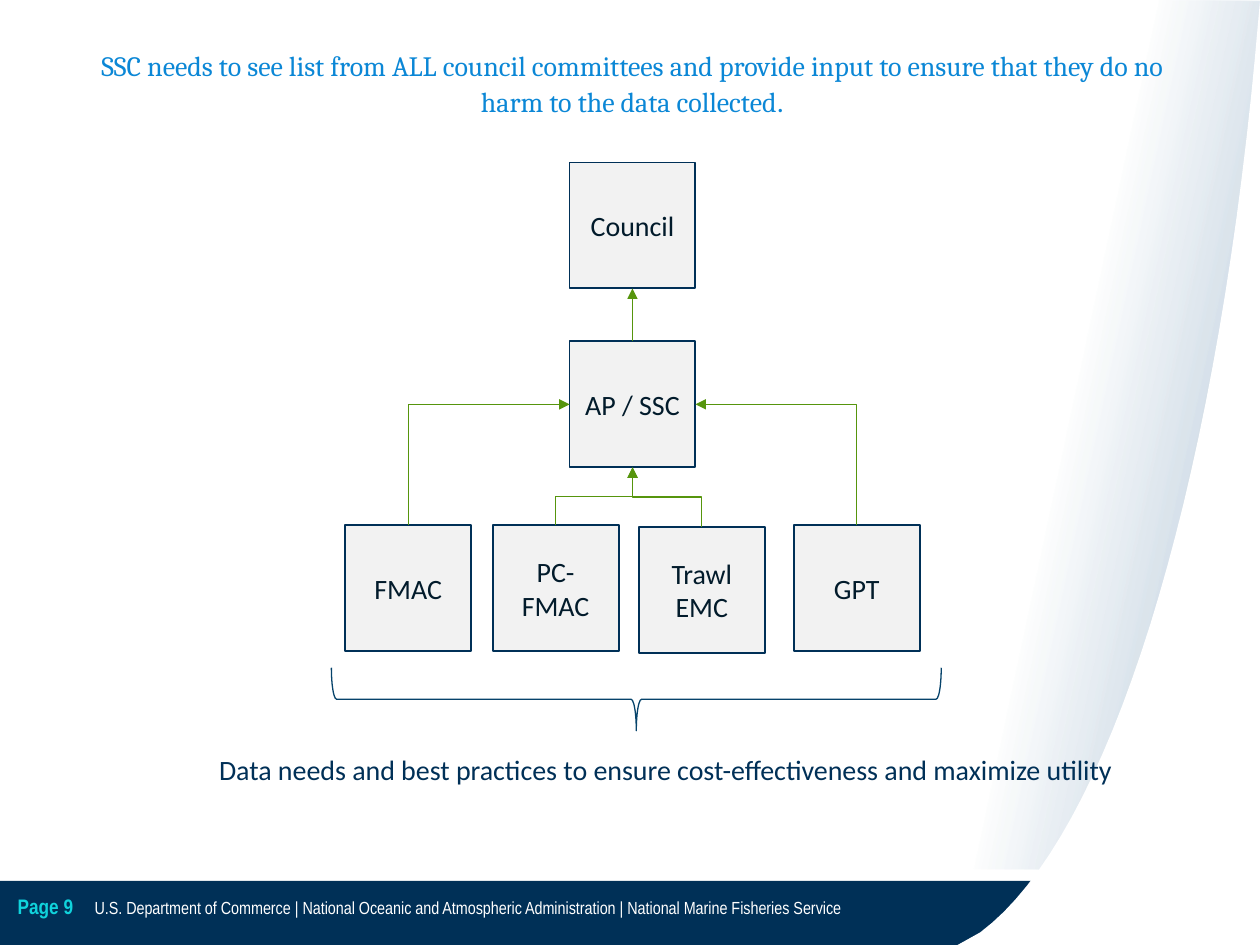
from lxml.etree import SubElement
from pptx import Presentation
from pptx.dml.color import RGBColor
from pptx.enum.shapes import MSO_CONNECTOR, MSO_SHAPE
from pptx.enum.text import MSO_ANCHOR, MSO_AUTO_SIZE, PP_ALIGN
from pptx.oxml.ns import qn
from pptx.util import Pt

PX = 9144
NAVY, GREEN, INK, PALE, WHITE = "003057", "56950D", "021B2B", "F2F2F2", "FFFFFF"


def color(value):
    """Turn a hex string into a colour."""
    return RGBColor.from_string(value)


def write(shape, text, size=16, font="Calibri", fill=NAVY, bold=False, align=PP_ALIGN.LEFT):
    """Add a formatted run to the first paragraph of a shape."""
    paragraph = shape.text_frame.paragraphs[0]
    paragraph.alignment = align
    run = paragraph.add_run()
    run.text = text
    run.font.size, run.font.name, run.font.bold = Pt(size), font, bold
    run.font.color.rgb = color(fill)
    return paragraph


def cubic(start, pull, push, end, steps=32):
    """Return points along a cubic curve, after its start."""
    points = []
    for step in range(1, steps + 1):
        t = step / steps
        weights = ((1 - t) ** 3, 3 * t * (1 - t) ** 2, 3 * t * t * (1 - t), t ** 3)
        points.append(tuple(
            sum(w * p[axis] for w, p in zip(weights, (start, pull, push, end)))
            for axis in (0, 1)))
    return points


class Chart:
    """Hold the slide and draw each kind of element on it."""

    def __init__(self, deck):
        """Add a blank slide to the deck."""
        self.slide = deck.slides.add_slide(deck.slide_layouts[6])
        self.shapes = self.slide.shapes

    def preset(self, kind, left, top, width, height, fill=None, line=None, weight=1.1):
        """Draw a preset shape."""
        shape = self.shapes.add_shape(kind, left * PX, top * PX, width * PX, height * PX)
        shape.shadow.inherit = False
        if fill:
            shape.fill.solid()
            shape.fill.fore_color.rgb = color(fill)
        else:
            shape.fill.background()
        if line:
            shape.line.color.rgb = color(line)
            shape.line.width = Pt(weight)
        else:
            shape.line.fill.background()
        return shape

    def box(self, name, left, top):
        """Draw a labelled square of the organisation chart."""
        square = self.preset(MSO_SHAPE.RECTANGLE, left, top, 100, 100, PALE, NAVY)
        square.text_frame.vertical_anchor = MSO_ANCHOR.MIDDLE
        write(square, name, fill=INK, align=PP_ALIGN.CENTER)

    def outline(self, points):
        """Draw a closed shape without a line."""
        (x, y), *rest = [(round(x * PX), round(y * PX)) for x, y in points]
        builder = self.shapes.build_freeform(x, y)
        builder.add_line_segments(rest, close=True)
        shape = builder.convert_to_shape()
        shape.shadow.inherit = False
        shape.line.fill.background()
        return shape

    def fade(self, points, tint, alphas, stops, angle):
        """Draw an outline that fades from one opacity to another."""
        shape = self.outline(points)
        shape.fill.gradient()
        shape.fill.gradient_angle = angle
        for stop, position in zip(shape.fill.gradient_stops, stops):
            stop.color.rgb = color(tint)
            stop.position = position
        tints = shape._element.spPr.find(qn("a:gradFill")).iter(qn("a:srgbClr"))
        for element, alpha in zip(tints, alphas):
            SubElement(element, qn("a:alpha"), val=str(alpha * 1000))

    def text_box(self, left, top, width, height, wrap=True, anchor=MSO_ANCHOR.TOP, insets=None):
        """Add an empty text box."""
        box = self.shapes.add_textbox(left * PX, top * PX, width * PX, height * PX)
        frame = box.text_frame
        frame.word_wrap, frame.vertical_anchor = wrap, anchor
        if insets is None:
            frame.auto_size = MSO_AUTO_SIZE.SHAPE_TO_FIT_TEXT
        else:
            frame.margin_left = frame.margin_right = 0
            frame.margin_top = frame.margin_bottom = insets * PX
        return box

    def arrow_up(self, start, end, preset="bentConnector3"):
        """Draw an elbow arrow that leaves its start upwards."""
        (x1, y1), (x2, y2) = start, end
        middle_x, middle_y = (x1 + x2) * PX // 2, (y1 + y2) * PX // 2
        half_w, half_h = (y1 - y2) * PX // 2, abs(x2 - x1) * PX // 2
        side = 1 if x2 > x1 else -1
        elbow = self.shapes.add_connector(
            MSO_CONNECTOR.ELBOW, middle_x + side * half_w, middle_y + half_h,
            middle_x - side * half_w, middle_y - half_h)
        properties = elbow._element.spPr
        properties.find(qn("a:xfrm")).set("rot", str((90 if side > 0 else 270) * 60000))
        properties.find(qn("a:prstGeom")).set("prst", preset)
        elbow.line.color.rgb = color(GREEN)
        elbow.line.width = Pt(0.75)
        SubElement(properties.find(qn("a:ln")), qn("a:tailEnd"), type="triangle")
        SubElement(properties, qn("a:effectLst"))


def draw_frame(chart):
    """Draw the footer band and the curved right edge."""
    chart.preset(MSO_SHAPE.RECTANGLE, 0, 699, 1000, 51, NAVY)
    chart.fade([(994, 690), (752, 689), (896, 0), (1000, 1)], "07477D", (0, 34), (0.42, 1), 348)
    bend = cubic((778, 740), (880, 664), (963, 396), (996, 46))
    edge = chart.outline([(1000, 1), (1000, 750), (760, 750), (778, 740), *bend])
    edge.fill.solid()
    edge.fill.fore_color.rgb = color(WHITE)
    agency = chart.text_box(75, 691, 732, 59, anchor=MSO_ANCHOR.MIDDLE, insets=5)
    write(agency, "U.S. Department of Commerce | National Oceanic and Atmospheric "
          "Administration | National Marine Fisheries Service", 10, "Arial Narrow", WHITE)
    page = chart.text_box(14, 689, 61, 61, anchor=MSO_ANCHOR.MIDDLE, insets=0)
    write(page, "Page 9", 12, "Arial Narrow", "10D3DC", bold=True)


def draw_committees(chart):
    """Draw the committees and their arrows up to the council."""
    for name, left, top in (
            ("FMAC", 274, 417), ("PC-FMAC", 391, 417), ("Trawl EMC", 507, 418),
            ("GPT", 630, 417), ("AP / SSC", 452, 271), ("Council", 452, 129)):
        chart.box(name, left, top)
    for start in ((441, 417), (557, 418)):
        chart.arrow_up(start, (502, 371))
    chart.arrow_up((502, 271), (502, 229))
    for start, end in (((324, 417), (452, 321)), ((680, 417), (552, 321))):
        chart.arrow_up(start, end, "bentConnector2")
    brace = chart.preset(MSO_SHAPE.RIGHT_BRACE, 480, 313, 50, 484, line="06436B", weight=0.75)
    brace.rotation = 90


def draw_statements(chart):
    """Write the title and the closing statement."""
    needs = chart.text_box(164, 592, 739, 37, wrap=False)
    write(needs, "Data needs and best practices to ensure cost-effectiveness and maximize utility")
    title = chart.text_box(70, 32, 864, 68)
    look = {"fill": "0B87D6", "align": PP_ALIGN.CENTER}
    write(title, "SSC needs to see list from ALL council committees and provide input to "
          "ensure that they do no harm to the data collected", font="Cambria", **look)
    paragraph = write(title, ".", **look)
    paragraph.line_spacing, paragraph.space_after = 1.07, Pt(8)


def main():
    """Build and save the slide."""
    deck = Presentation()
    deck.slide_width, deck.slide_height = 1000 * PX, 750 * PX
    chart = Chart(deck)
    draw_frame(chart)
    draw_committees(chart)
    draw_statements(chart)
    deck.save("out.pptx")


if __name__ == "__main__":
    main()
